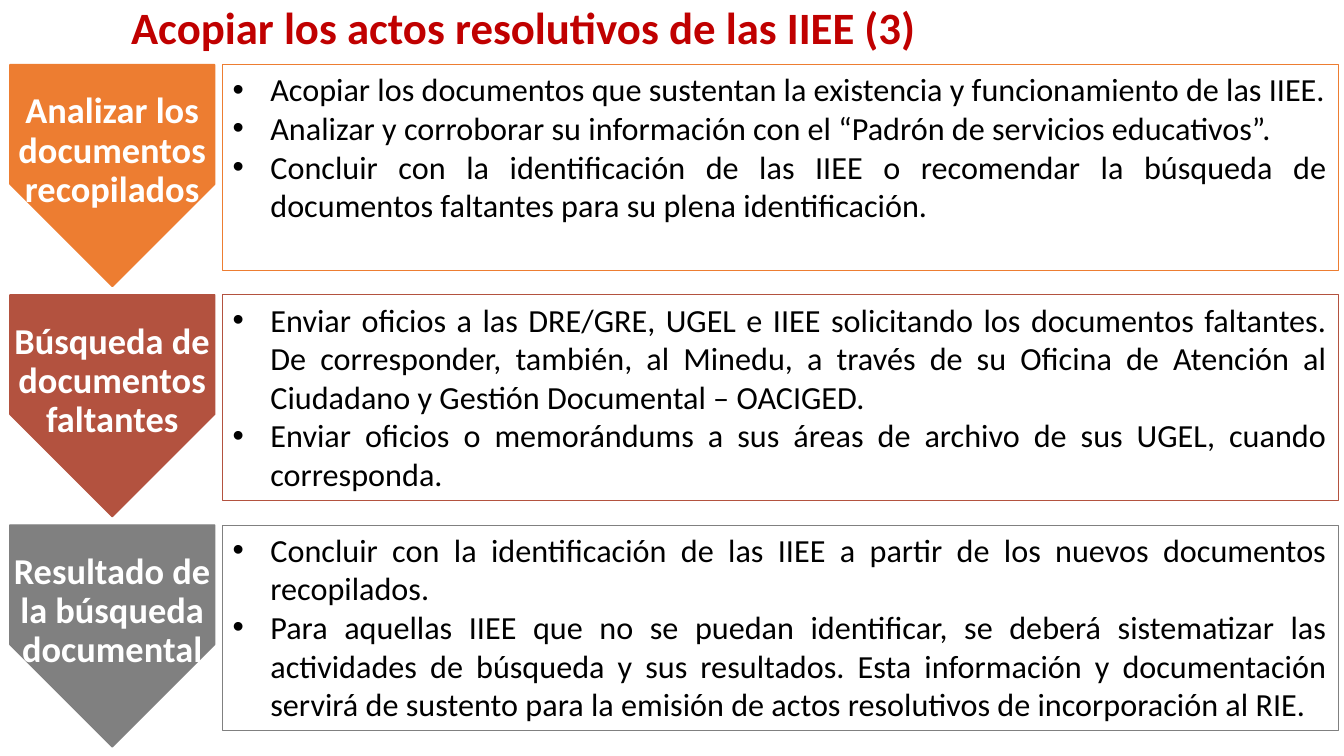
from lxml import etree
from pptx import Presentation
from pptx import util as u
from pptx.dml import color
from pptx.enum import shapes, text
from pptx.oxml import ns

FONT = "Calibri"
ROWS_TOP, ROW_STEP = 1.63, 5.8
ARROW_LEFT, ARROW_WIDTH, ARROW_LENGTH = 0.25, 5.16, 5.59
LABEL_HEIGHT, LABEL_INSET = 4.37, 0.05
LIST_LEFT, LIST_WIDTH, LIST_HEIGHT = 5.61, 28.12, 5.18
HANGING = 0.95

STEPS = [
    (1, "ED7D31", "Analizar los documentos recopilados", [
        "Acopiar los documentos que sustentan la existencia y funcionamiento de las IIEE.",
        "Analizar y corroborar su información con el “Padrón de servicios educativos”.",
        "Concluir con la identificación de las IIEE o recomendar la búsqueda de "
        "documentos faltantes para su plena identificación.",
    ]),
    (2, "B3523F", "Búsqueda de documentos faltantes", [
        "Enviar oficios a las DRE/GRE, UGEL e IIEE solicitando los documentos faltantes. "
        "De corresponder, también, al Minedu, a través de su Oficina de Atención al "
        "Ciudadano y Gestión Documental – OACIGED.",
        "Enviar oficios o memorándums a sus áreas de archivo de sus UGEL, cuando corresponda.",
    ]),
    (4, "808080", "Resultado de la búsqueda documental", [
        "Concluir con la identificación de las IIEE a partir de los nuevos documentos recopilados.",
        "Para aquellas IIEE que no se puedan identificar, se deberá sistematizar las "
        "actividades de búsqueda y sus resultados. Esta información y documentación "
        "servirá de sustento para la emisión de actos resolutivos de incorporación al RIE.",
    ]),
]


def rgb(value):
    return color.RGBColor.from_string(value)


def place(shape, left, top, width, height):
    shape.left, shape.top = u.Cm(left), u.Cm(top)
    shape.width, shape.height = u.Cm(width), u.Cm(height)


def paint(shape, fill, line, weight):
    shape.fill.solid()
    shape.fill.fore_color.rgb = rgb(fill)
    shape.line.color.rgb = rgb(line)
    shape.line.width = u.Pt(weight)


def set_frame(shape, anchor):
    frame = shape.text_frame
    frame.word_wrap = True
    frame.auto_size = text.MSO_AUTO_SIZE.NONE
    frame.vertical_anchor = anchor
    return frame


def write(para, words, size, hue, bold, align, spacing=1.0):
    para.alignment = align
    para.line_spacing = spacing
    para.space_before = para.space_after = u.Pt(0)
    span = para.add_run()
    span.text = words
    span.font.name = FONT
    span.font.size = u.Pt(size)
    span.font.bold = bold
    span.font.color.rgb = rgb(hue)


def add_bullet(para):
    props = para._p.get_or_add_pPr()
    props.set("marL", str(u.Cm(HANGING)))
    props.set("indent", str(-u.Cm(HANGING)))
    etree.SubElement(props, ns.qn("a:buFont")).set("typeface", "Arial")
    etree.SubElement(props, ns.qn("a:buChar")).set("char", "•")


def fill_title(title, words):
    place(title, 3.05, 0, 25.98, 1.5)
    frame = set_frame(title, text.MSO_ANCHOR.MIDDLE)
    write(frame.paragraphs[0], words, 32, "C00000", True, text.PP_ALIGN.LEFT, 0.9)


def fill_list(box, top, hue, items):
    place(box, LIST_LEFT, top, LIST_WIDTH, LIST_HEIGHT)
    paint(box, "FFFFFF", hue, 0.75)
    frame = set_frame(box, text.MSO_ANCHOR.TOP)
    for number, item in enumerate(items):
        para = frame.add_paragraph() if number else frame.paragraphs[0]
        add_bullet(para)
        write(para, item, 23, "000000", False, text.PP_ALIGN.JUSTIFY)


def add_step_arrow(page, top, hue, words):
    group = page.shapes.add_group_shape()
    shift = (ARROW_LENGTH - ARROW_WIDTH) / 2
    arrow = group.shapes.add_shape(
        shapes.MSO_SHAPE.PENTAGON, u.Cm(ARROW_LEFT - shift), u.Cm(top + shift),
        u.Cm(ARROW_LENGTH), u.Cm(ARROW_WIDTH))
    arrow.rotation = 90
    arrow.shadow.inherit = False
    paint(arrow, hue, hue, 1)

    label = group.shapes.add_textbox(
        u.Cm(ARROW_LEFT), u.Cm(top), u.Cm(ARROW_WIDTH), u.Cm(LABEL_HEIGHT))
    frame = set_frame(label, text.MSO_ANCHOR.MIDDLE)
    frame.margin_left = frame.margin_right = u.Cm(LABEL_INSET)
    frame.margin_top = frame.margin_bottom = u.Cm(LABEL_INSET)
    write(frame.paragraphs[0], words, 26, "FFFFFF", True, text.PP_ALIGN.CENTER, 0.9)


def remove_empty_placeholders(page):
    for holder in list(page.placeholders):
        if not holder.text_frame.text:
            holder._element.getparent().remove(holder._element)


def main():
    deck = Presentation()
    deck.slide_width, deck.slide_height = u.Cm(33.87), u.Cm(19.05)
    page = deck.slides.add_slide(deck.slide_layouts.get_by_name("Comparison"))
    fill_title(page.shapes.title, "Acopiar los actos resolutivos de las IIEE (3)")
    holders = {holder.placeholder_format.idx: holder for holder in page.placeholders}
    for row, (index, hue, label, items) in enumerate(STEPS):
        top = ROWS_TOP + row * ROW_STEP
        fill_list(holders[index], top, hue, items)
        add_step_arrow(page, top, hue, label)
    remove_empty_placeholders(page)
    deck.save("out.pptx")


if __name__ == "__main__":
    main()
